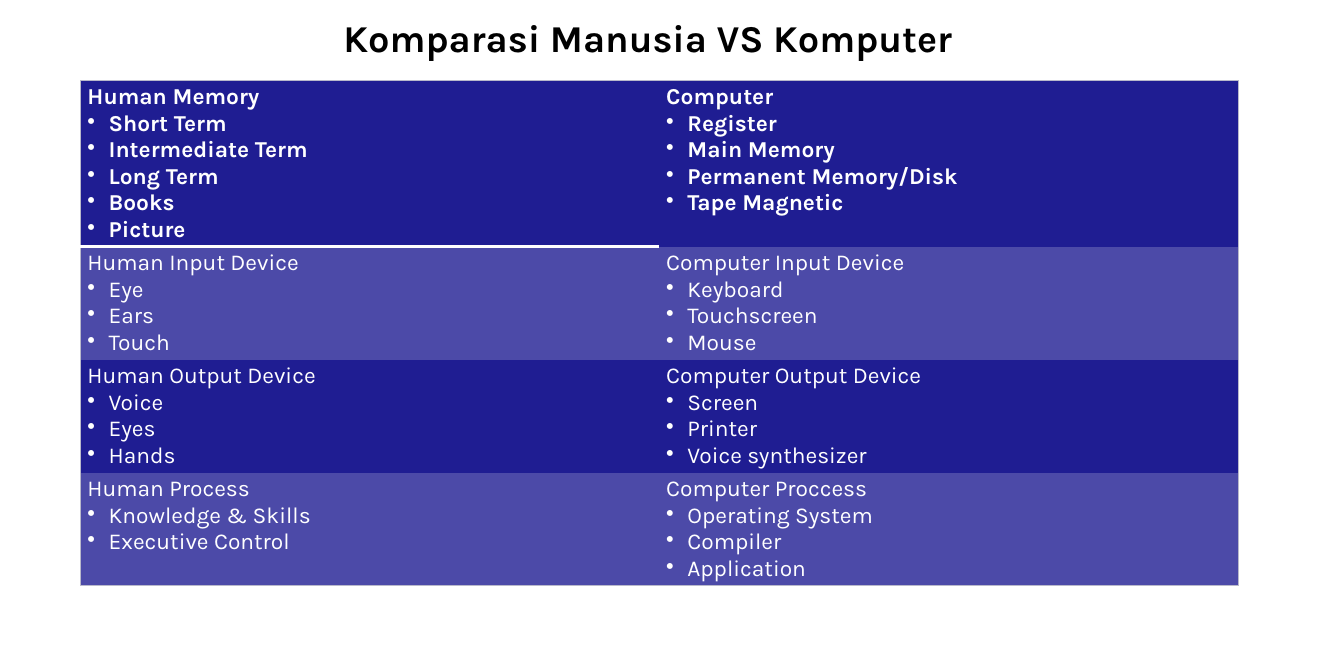
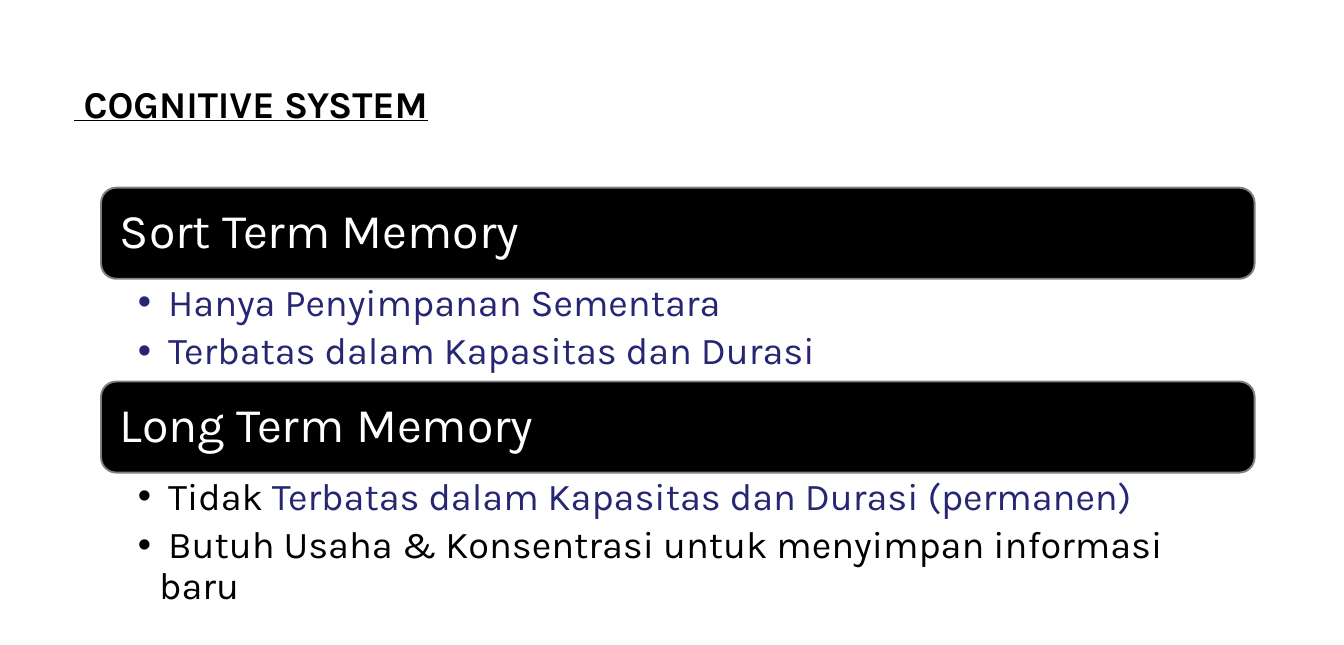
import lxml.etree
import pptx
import pptx.dml.color
import pptx.enum.shapes
import pptx.enum.text
import pptx.oxml.ns
import pptx.util

WIDE, HIGH = 19.69, 9.45
FONT = "Karla"
BLACK, WHITE, NAVY = "000000", "FFFFFF", "262673"
GREY, FRAME = "808080", "B9B9CB"
BANDS = ("1F1D92", "4C4AA8")
NO_STYLE = "{2D5ABB26-0587-4C30-8999-92F81FD0307C}"
ALIGN = pptx.enum.text.PP_ALIGN
MIDDLE = pptx.enum.text.MSO_ANCHOR.MIDDLE
TOP = pptx.enum.text.MSO_ANCHOR.TOP

PAIRS = [
    (["Human Memory", "Short Term", "Intermediate Term", "Long Term",
      "Books", "Picture"],
     ["Computer", "Register", "Main Memory", "Permanent Memory/Disk",
      "Tape Magnetic"]),
    (["Human Input Device", "Eye", "Ears", "Touch"],
     ["Computer Input Device", "Keyboard", "Touchscreen", "Mouse"]),
    (["Human Output Device", "Voice", "Eyes", "Hands"],
     ["Computer Output Device", "Screen", "Printer", "Voice synthesizer"]),
    (["Human Process", "Knowledge & Skills", "Executive Control"],
     ["Computer Proccess", "Operating System", "Compiler", "Application"]),
]
TERMS = [
    ("Sort Term Memory",
     [[(" Hanya Penyimpanan Sementara", NAVY)],
      [(" Terbatas dalam Kapasitas dan Durasi", NAVY)]]),
    ("Long Term Memory",
     [[(" Tidak ", BLACK),
       ("Terbatas dalam Kapasitas dan Durasi (permanen)", NAVY)],
      [(" Butuh Usaha & Konsentrasi untuk menyimpan informasi baru", BLACK)]]),
]


def inch(size):
    """Turn inches into whole EMU."""
    return pptx.util.Emu(round(size * 914400))


def span(box):
    """Turn a box in percent of the slide into EMU."""
    left, top, width, height = box
    return [inch(share * side / 100) for share, side in
            ((left, WIDE), (top, HIGH), (width, WIDE), (height, HIGH))]


def move(shape, box):
    """Put a placeholder into a box."""
    shape.left, shape.top, shape.width, shape.height = span(box)


def tint(color, code):
    """Set a colour format from a hex string."""
    color.rgb = pptx.dml.color.RGBColor.from_string(code)


def fill(thing, code):
    """Fill a shape or a cell with one colour."""
    thing.fill.solid()
    tint(thing.fill.fore_color, code)


def write(para, text, size, code, bold=False, line=False):
    """Add one run to a paragraph."""
    run = para.add_run()
    run.text = text
    font = run.font
    font.name, font.size = FONT, pptx.util.Pt(size)
    font.bold, font.underline = bold, line
    tint(font.color, code)


def dot(para):
    """Give a paragraph a round bullet and a hanging indent."""
    props = para._p.get_or_add_pPr()
    props.set("marL", str(inch(0.31)))
    props.set("indent", str(-inch(0.31)))
    mark = lxml.etree.SubElement(props, pptx.oxml.ns.qn("a:buChar"))
    mark.set("char", "•")


def lines(frame, items):
    """Yield a paragraph for each item of a text frame."""
    for index, item in enumerate(items):
        yield (frame.add_paragraph() if index else frame.paragraphs[0]), item


def fit(frame, anchor, pads):
    """Set anchor, wrapping and insets of a text frame."""
    frame.word_wrap = True
    frame.auto_size = pptx.enum.text.MSO_AUTO_SIZE.NONE
    frame.vertical_anchor = anchor
    (frame.margin_left, frame.margin_top,
     frame.margin_right, frame.margin_bottom) = [inch(pad) for pad in pads]


def head(slide, box, text, align, line=False):
    """Place and style the slide title."""
    title = slide.shapes.title
    move(title, box)
    fit(title.text_frame, MIDDLE, (0.1, 0.05, 0.1, 0.05))
    para = title.text_frame.paragraphs[0]
    para.alignment = align
    write(para, text, 40, BLACK, True, line)


def edge(cell, sides):
    """Draw cell borders, given in schema order as side, colour, width."""
    props = cell._tc.get_or_add_tcPr()
    for index, (side, code, width) in enumerate(sides):
        rule = lxml.etree.Element(pptx.oxml.ns.qn("a:ln" + side))
        rule.set("w", str(pptx.util.Pt(width)))
        ink = lxml.etree.SubElement(rule, pptx.oxml.ns.qn("a:solidFill"))
        tone = lxml.etree.SubElement(ink, pptx.oxml.ns.qn("a:srgbClr"))
        tone.set("val", code)
        props.insert(index, rule)


def sides(row, col, last):
    """List the borders of a cell: outer frame and rule below the header."""
    frame = [("L", col == 0), ("R", col == 1), ("T", row == 0),
             ("B", row == last)]
    found = [(side, FRAME, 0.75) for side, shown in frame if shown]
    if (row, col) == (0, 0):
        found.append(("B", WHITE, 3))
    return found


def grid(slide, box):
    """Build the table that compares human and computer."""
    left, top, width, height = span(box)
    table = slide.shapes.add_table(
        len(PAIRS), 2, left, top, width, height).table
    table.first_row = table.horz_banding = False
    table._tbl.tblPr.find(pptx.oxml.ns.qn("a:tableStyleId")).text = NO_STYLE
    for col, share in zip(table.columns, (0.5, 0.5)):
        col.width = round(width * share)
    parts = [max(map(len, pair)) + 0.26 for pair in PAIRS]
    for row, pair in enumerate(PAIRS):
        table.rows[row].height = round(height * parts[row] / sum(parts))
        for col, items in enumerate(pair):
            cell = table.cell(row, col)
            fill(cell, BANDS[row % 2])
            edge(cell, sides(row, col, len(PAIRS) - 1))
            for para, text in lines(cell.text_frame, items):
                if text != items[0]:
                    dot(para)
                write(para, text, 24, WHITE, row == 0)


def banner(slide, box, text):
    """Draw a rounded black bar with its heading."""
    bar = slide.shapes.add_shape(
        pptx.enum.shapes.MSO_SHAPE.ROUNDED_RECTANGLE, *span(box))
    bar.shadow.inherit = False
    fill(bar, BLACK)
    tint(bar.line.color, GREY)
    bar.line.width = pptx.util.Pt(2)
    fit(bar.text_frame, MIDDLE, (0.21,) * 4)
    para = bar.text_frame.paragraphs[0]
    para.alignment, para.line_spacing = ALIGN.LEFT, 0.9
    write(para, text, 51, WHITE)


def points(body, box, items):
    """Place a bullet list in a body placeholder."""
    move(body, box)
    fit(body.text_frame, TOP, (0.54, 0.07, 0.4, 0.07))
    for para, runs in lines(body.text_frame, items):
        dot(para)
        para.line_spacing = 0.9
        para.space_before, para.space_after = pptx.util.Pt(0), pptx.util.Pt(8)
        for text, code in runs:
            write(para, text, 40, code)


def stack(slide, box):
    """Stack bars and their lists in equal steps."""
    left, top, width, height = box
    step = height / len(TERMS)
    bar = step * 0.47
    for index, (name, items) in enumerate(TERMS):
        start = top + index * step
        banner(slide, (left, start, width, bar), name)
        points(slide.placeholders[index + 1],
               (left, start + bar, width, step - bar), items)


def compare(deck):
    """Add the slide with the comparison table."""
    slide = deck.slides.add_slide(deck.slide_layouts[5])
    head(slide, (3.2, -2.54, 90, 16.6), "Komparasi Manusia VS Komputer",
         ALIGN.CENTER)
    grid(slide, (6, 12.5, 86.13, 78.3))


def memory(deck):
    """Add the slide on kinds of memory."""
    slide = deck.slides.add_slide(deck.slide_layouts[3])
    head(slide, (5, 7.72, 90, 16.6), " COGNITIVE SYSTEM", ALIGN.JUSTIFY, True)
    stack(slide, (7.52, 29.1, 85.83, 60.1))


def main():
    """Build and save the deck."""
    deck = pptx.Presentation()
    deck.slide_width, deck.slide_height = inch(WIDE), inch(HIGH)
    compare(deck)
    memory(deck)
    deck.save("out.pptx")


if __name__ == "__main__":
    main()
